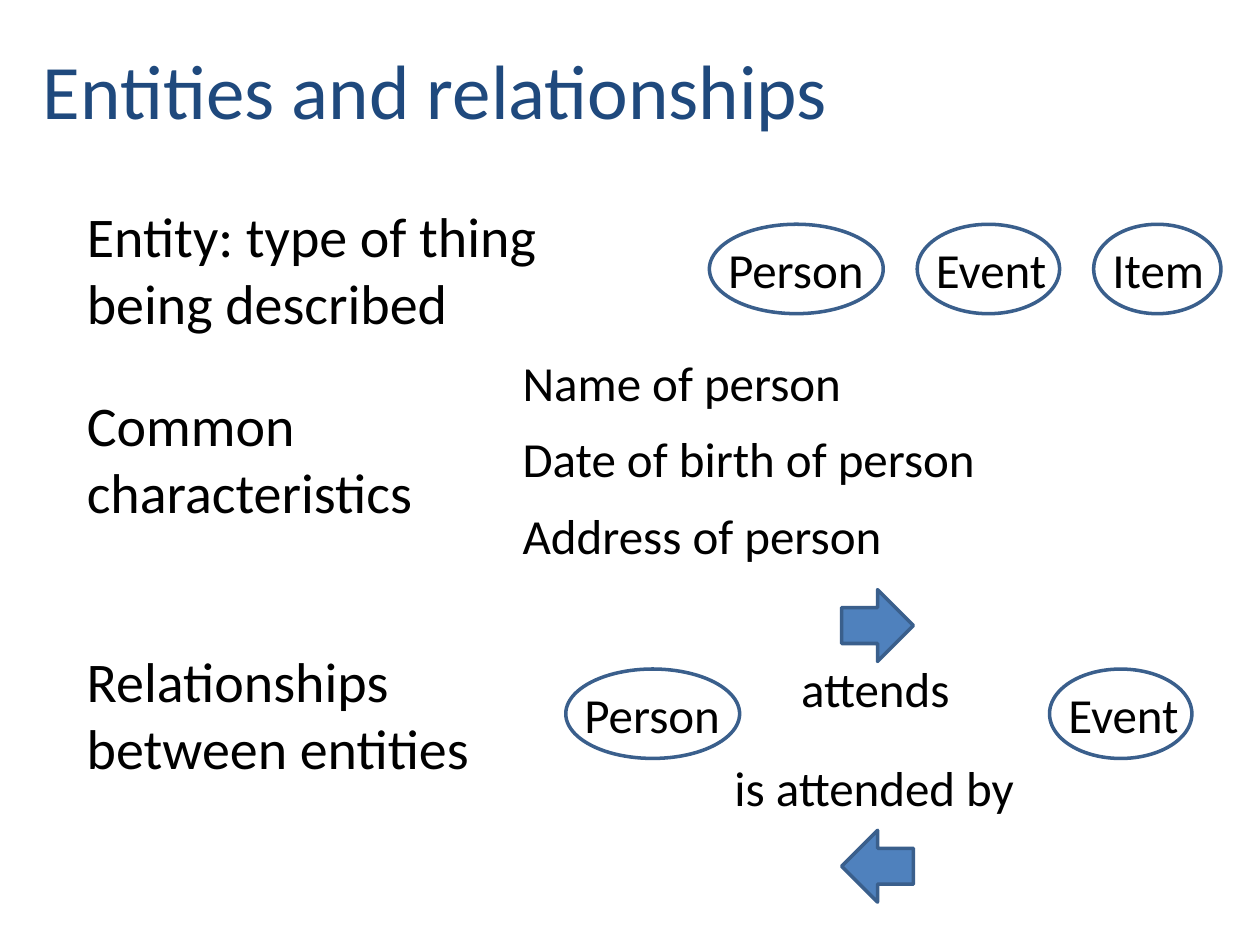
from dataclasses import dataclass

from pptx import Presentation
from pptx.dml.color import RGBColor
from pptx.enum.shapes import MSO_SHAPE
from pptx.enum.text import MSO_ANCHOR, PP_ALIGN
from pptx.util import Inches, Pt

OVAL = MSO_SHAPE.OVAL
RIGHT_ARROW = MSO_SHAPE.RIGHT_ARROW
LEFT_ARROW = MSO_SHAPE.LEFT_ARROW
TOP = MSO_ANCHOR.TOP
LEFT = PP_ALIGN.LEFT

FONT = "Calibri"
BLACK = "000000"
NAVY = "1F497D"
BLUE = "4F81BD"
OUTLINE = "3A5F8C"
LINE_H = 0.57
OVAL_H = 0.71
ARROW_SIZE = 0.57
ENTITY_WIDTHS = {"Person": (1.38, 1.29), "Event": (1.13, 1.09), "Item": (1.01, 0.94)}


@dataclass
class Label:
    text: str
    left: float
    top: float
    width: float
    height: float = LINE_H
    size: int = 28
    wrap: bool = False


@dataclass
class Entity:
    name: str
    left: float
    top: float


@dataclass
class Arrow:
    kind: MSO_SHAPE
    left: float
    top: float


HEADINGS = [
    Label("Entity: type of thing being described", 0.59, 1.55, 4.65, 1.18, 32, True),
    Label("Common characteristics", 0.59, 3.05, 3.15, 1.18, 32, True),
    Label("Relationships between entities", 0.59, 5.08, 3.86, 1.18, 32, True),
]
CHARACTERISTICS = [
    Label(text, 4.05, round(2.75 + 0.605 * i, 2), width)
    for i, (text, width) in enumerate([
        ("Name of person", 2.76),
        ("Date of birth of person", 3.83),
        ("Address of person", 3.08),
    ])
]
RELATIONS = [
    Label("attends", 6.26, 5.18, 1.4),
    Label("is attended by", 5.73, 5.96, 2.46),
]
ENTITIES = [
    Entity("Person", 5.63, 1.78),
    Entity("Event", 7.28, 1.78),
    Entity("Item", 8.68, 1.78),
    Entity("Person", 4.49, 5.31),
    Entity("Event", 8.33, 5.31),
]
ARROWS = [Arrow(RIGHT_ARROW, 6.68, 4.68), Arrow(LEFT_ARROW, 6.68, 6.59)]


def rgb(color: str) -> RGBColor:
    return RGBColor.from_string(color)


def write_text(sp, text: str, size: int, color: str, wrap: bool) -> None:
    tf = sp.text_frame
    tf.text = text
    tf.word_wrap = wrap
    tf.vertical_anchor = TOP
    p = tf.paragraphs[0]
    p.alignment = LEFT
    font = p.runs[0].font
    font.name = FONT
    font.size = Pt(size)
    font.color.rgb = rgb(color)


def add_label(shapes, label: Label) -> None:
    sp = shapes.add_textbox(Inches(label.left), Inches(label.top),
                            Inches(label.width), Inches(label.height))
    write_text(sp, label.text, label.size, BLACK, label.wrap)


def add_outlined(shapes, kind: MSO_SHAPE, left: float, top: float,
                 width: float, height: float):
    sp = shapes.add_shape(kind, Inches(left), Inches(top), Inches(width), Inches(height))
    sp.shadow.inherit = False
    sp.line.color.rgb = rgb(OUTLINE)
    sp.line.width = Pt(2)
    return sp


def add_entity(shapes, entity: Entity) -> None:
    oval_w, text_w = ENTITY_WIDTHS[entity.name]
    group = shapes.add_group_shape()
    sp = add_outlined(group.shapes, OVAL, entity.left, entity.top, oval_w, OVAL_H)
    sp.fill.background()
    add_label(group.shapes, Label(entity.name, entity.left + 0.05, entity.top + 0.07, text_w))


def add_arrow(shapes, arrow: Arrow) -> None:
    sp = add_outlined(shapes, arrow.kind, arrow.left, arrow.top, ARROW_SIZE, ARROW_SIZE)
    sp.fill.solid()
    sp.fill.fore_color.rgb = rgb(BLUE)


def main() -> None:
    prs = Presentation()
    prs.slide_width = Inches(10)
    prs.slide_height = Inches(7.5)
    s = prs.slides.add_slide(prs.slide_layouts[5])

    title = s.shapes.title
    title.left, title.top = Inches(0.24), Inches(0.29)
    title.width, title.height = Inches(6.51), Inches(0.84)
    write_text(title, "Entities and relationships", 44, NAVY, False)

    for label in HEADINGS + CHARACTERISTICS + RELATIONS:
        add_label(s.shapes, label)
    for entity in ENTITIES:
        add_entity(s.shapes, entity)
    for arrow in ARROWS:
        add_arrow(s.shapes, arrow)

    prs.save("out.pptx")


if __name__ == "__main__":
    main()
